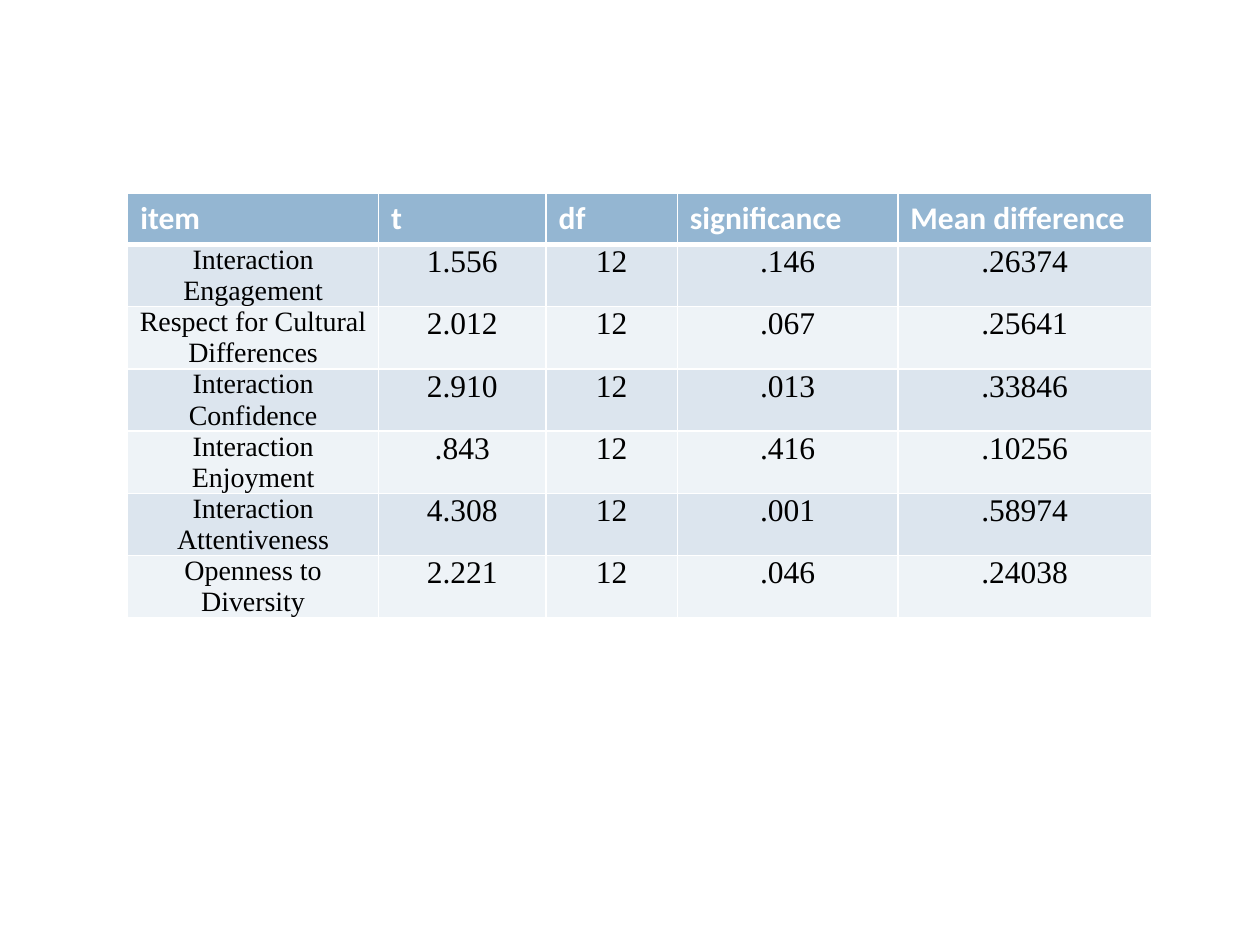
from lxml import etree
from pptx import Presentation
from pptx.dml.color import RGBColor
from pptx.enum.text import PP_ALIGN
from pptx.oxml.ns import qn
from pptx.util import Pt

WHITE, BLACK, HEAD = "FFFFFF", "000000", "94B6D2"
BANDS = ("DCE5EE", "EEF3F7")
WIDTHS = (143.3, 95.8, 75, 126, 144.9)
ROW = 29.5
TITLES = ("item", "t", "df", "significance", "Mean difference")
SCORES = (
    ("Interaction Engagement", "1.556", "12", ".146", ".26374"),
    ("Respect for Cultural Differences", "2.012", "12", ".067", ".25641"),
    ("Interaction Confidence", "2.910", "12", ".013", ".33846"),
    ("Interaction Enjoyment", ".843", "12", ".416", ".10256"),
    ("Interaction Attentiveness", "4.308", "12", ".001", ".58974"),
    ("Openness to Diversity", "2.221", "12", ".046", ".24038"),
)


def color(text):
    return RGBColor.from_string(text)


def edge(cell, **sides):
    """Draw white borders; sides maps L, R, T, B to widths in points."""
    props = cell._tc.get_or_add_tcPr()
    for side, width in sides.items():
        line = etree.SubElement(props, qn(f"a:ln{side}"), w=str(Pt(width)))
        fill = etree.SubElement(line, qn("a:solidFill"))
        etree.SubElement(fill, qn("a:srgbClr"), val=WHITE)


def paint(cell, text, fill, size, face, ink, bold):
    cell.fill.solid()
    cell.fill.fore_color.rgb = color(fill)
    cell.text_frame.text = text
    font = cell.text_frame.paragraphs[0].runs[0].font
    font.size, font.name, font.bold = Pt(size), face, bold
    font.color.rgb = color(ink)


def add_scores(slide, left, top, width):
    rows = len(SCORES) + 1
    frame = slide.shapes.add_table(
        rows, len(TITLES), Pt(left), Pt(top), Pt(width), Pt(ROW * rows))
    table = frame.table
    for col, share in zip(table.columns, WIDTHS):
        col.width = Pt(width * share / sum(WIDTHS))
    for row in table.rows:
        row.height = Pt(ROW)

    for c, title in enumerate(TITLES):
        cell = table.cell(0, c)
        edge(cell, L=1, R=1, T=1, B=3)
        paint(cell, title, HEAD, 18, "Calibri", WHITE, True)

    for r, score in enumerate(SCORES, 1):
        for c, text in enumerate(score):
            cell = table.cell(r, c)
            edge(cell, L=1, R=1, T=3 if r == 1 else 1, B=1)
            paint(cell, text, BANDS[(r - 1) % 2], 18 if c else 16,
                  "Times New Roman", BLACK, False)
            cell.margin_left = cell.margin_right = Pt(5)
            cell.margin_top = cell.margin_bottom = Pt(0)
            cell.text_frame.paragraphs[0].alignment = PP_ALIGN.CENTER


def main():
    deck = Presentation()
    deck.slide_width, deck.slide_height = Pt(720), Pt(540)
    slide = deck.slides.add_slide(deck.slide_layouts[6])
    add_scores(slide, 73, 110.2, 585)
    deck.save("out.pptx")


if __name__ == "__main__":
    main()
